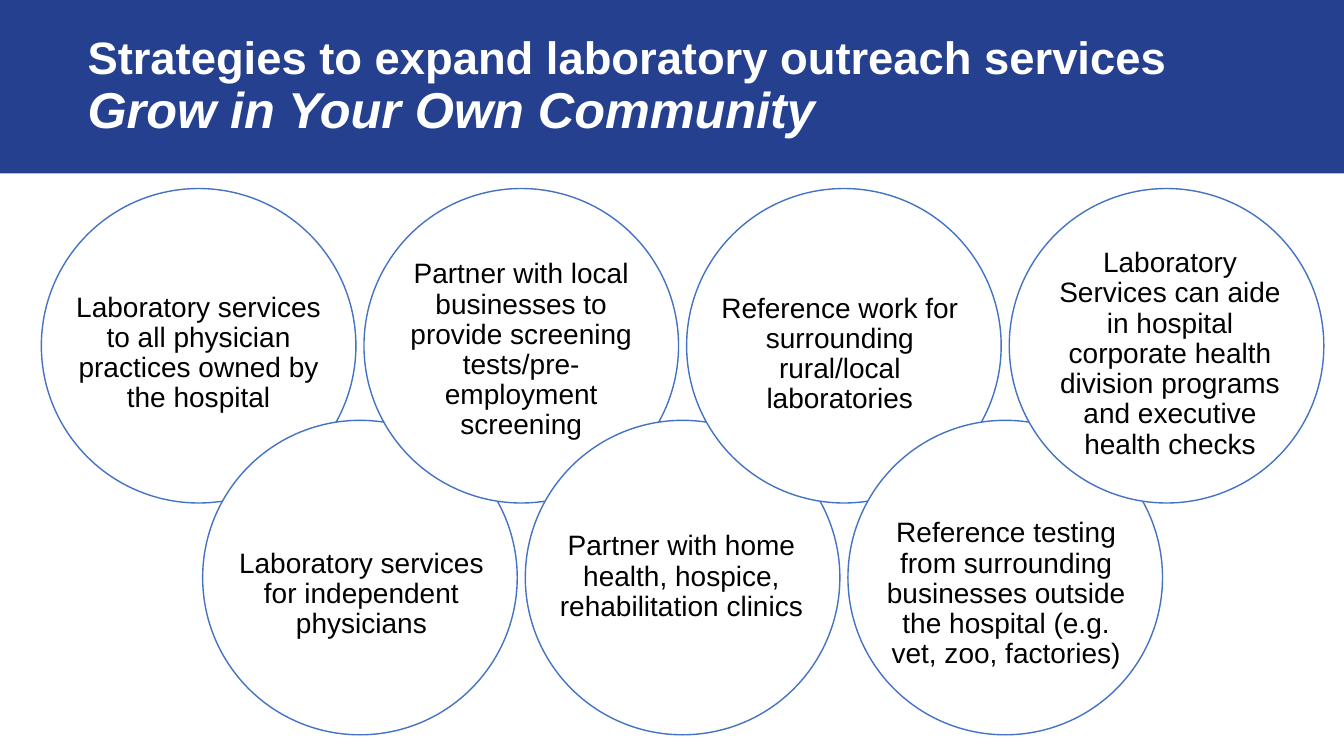
from pptx import Presentation
from pptx.dml.color import RGBColor
from pptx.enum.shapes import MSO_SHAPE
from pptx.enum.text import MSO_ANCHOR, PP_ALIGN
from pptx.util import Inches, Pt

COLORS = {"banner": "25408F", "outline": "4472C4", "white": "FFFFFF", "text": "000000"}
FONT = "Arial"
CIRCLE_SIZE = 3.12
CIRCLE_STEP = 1.6
ROW_DROP = 2.3
LABEL_HEIGHT = 2.21

STRATEGIES = [
    ("Laboratory services to all physician practices owned by the hospital", 0.27, 0.53, 2.58),
    ("Laboratory services for independent physicians", 0.2, 0.62, 2.75),
    ("Partner with local businesses to provide screening tests/pre-employment screening",
     0.16, 0.5, 2.8),
    ("Partner with home health, hospice, rehabilitation clinics", 0.22, 0.45, 2.66),
    ("Reference work for surrounding rural/local laboratories", 0.24, 0.54, 2.56),
    ("Reference testing from surrounding businesses outside the hospital "
     "(e.g. vet, zoo, factories)", 0.24, 0.62, 2.66),
    ("Laboratory Services can aide in hospital corporate health division programs "
     "and executive health checks", 0.36, 0.54, 2.47),
]


def color(name):
    return RGBColor.from_string(COLORS[name])


def add_figure(slide, kind, left, top, width, height, fill, line=None):
    shape = slide.shapes.add_shape(
        kind, Inches(left), Inches(top), Inches(width), Inches(height))
    shape.shadow.inherit = False
    shape.fill.solid()
    shape.fill.fore_color.rgb = color(fill)
    if line:
        shape.line.color.rgb = color(line)
        shape.line.width = Pt(1)
    else:
        shape.line.fill.background()
    return shape


def add_text(slide, lines, left, top, width, height, *, fill="text",
             align=PP_ALIGN.LEFT, bold=False, margins=(0.1, 0.05)):
    box = slide.shapes.add_textbox(
        Inches(left), Inches(top), Inches(width), Inches(height))
    frame = box.text_frame
    frame.word_wrap = True
    frame.vertical_anchor = MSO_ANCHOR.MIDDLE
    frame.margin_left = frame.margin_right = Inches(margins[0])
    frame.margin_top = frame.margin_bottom = Inches(margins[1])
    paragraph = frame.paragraphs[0]
    paragraph.alignment = align
    paragraph.line_spacing = 0.9
    for index, (text, size, italic) in enumerate(lines):
        if index:
            paragraph.add_line_break()
        run = paragraph.add_run()
        run.text = text
        run.font.name = FONT
        run.font.size = Pt(size)
        run.font.bold = bold
        run.font.italic = italic
        run.font.color.rgb = color(fill)


def add_header(slide, left, top, width, height):
    add_figure(slide, MSO_SHAPE.RECTANGLE, left, top, width, height, "banner")
    lines = [("Strategies to expand laboratory outreach services", 32.4, False),
             ("Grow in Your Own Community", 36, True)]
    add_text(slide, lines, left + 0.77, top + 0.22, width - 1.35, height - 0.43,
             fill="white", bold=True)


def add_circles(slide, left, top):
    for index, (label, inset, drop, width) in enumerate(STRATEGIES):
        circle_left = left + index * CIRCLE_STEP
        circle_top = top + index % 2 * ROW_DROP
        add_figure(slide, MSO_SHAPE.OVAL, circle_left, circle_top,
                   CIRCLE_SIZE, CIRCLE_SIZE, "white", "outline")
        add_text(slide, [(label, 20, False)], circle_left + inset, circle_top + drop,
                 width, LABEL_HEIGHT, align=PP_ALIGN.CENTER, margins=(0.07, 0.07))


def main():
    presentation = Presentation()
    presentation.slide_width = Inches(13.33)
    presentation.slide_height = Inches(7.5)
    slide = presentation.slides.add_slide(presentation.slide_layouts[6])
    add_header(slide, 0, 0, 13.33, 1.72)
    add_circles(slide, 0.41, 1.87)
    presentation.save("out.pptx")


if __name__ == "__main__":
    main()
